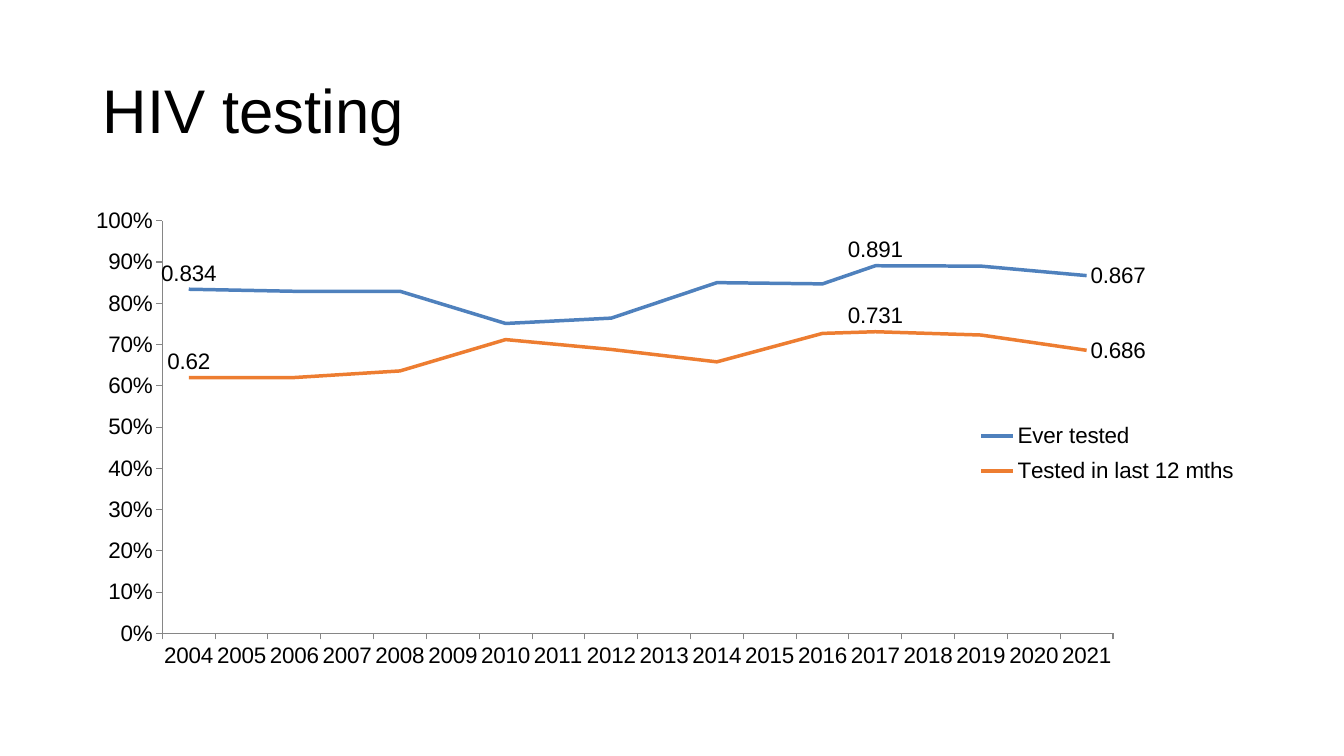
from lxml import etree
from pptx import Presentation
from pptx.chart.data import CategoryChartData
from pptx.dml.color import RGBColor
from pptx.enum.chart import XL_CHART_TYPE as ChartType
from pptx.enum.chart import XL_LABEL_POSITION as LabelPosition
from pptx.enum.chart import XL_LEGEND_POSITION as LegendPosition
from pptx.enum.chart import XL_TICK_MARK as TickMark
from pptx.enum.text import MSO_ANCHOR, PP_ALIGN
from pptx.oxml.ns import qn
from pptx.util import Inches, Pt

FONT = "Arial"
YEARS = range(2004, 2022)
# Survey years only; the line spans the years between
EVER_TESTED = {2004: 0.834, 2006: 0.829, 2008: 0.829, 2010: 0.751, 2012: 0.764,
               2014: 0.85, 2016: 0.847, 2017: 0.891, 2019: 0.89, 2021: 0.867}
LAST_YEAR = {2004: 0.62, 2006: 0.62, 2008: 0.636, 2010: 0.712, 2012: 0.688,
             2014: 0.658, 2016: 0.727, 2017: 0.731, 2019: 0.723, 2021: 0.686}
SERIES = [("Ever tested", EVER_TESTED, "4F81BD"),
          ("Tested in last 12 mths", LAST_YEAR, "ED7D31")]
LABELS = {2004: LabelPosition.ABOVE, 2017: LabelPosition.ABOVE,
          2021: LabelPosition.RIGHT}


def color(hex_code):
    return RGBColor.from_string(hex_code)


def set_font(font, size):
    font.name = FONT
    font.size = Pt(size)
    font.color.rgb = color("000000")


def add_title(page, text):
    title = page.shapes.title
    title.left, title.top = Inches(0.92), Inches(0.4)
    title.width, title.height = Inches(11.5), Inches(1.45)
    frame = title.text_frame
    frame.text = text
    frame.word_wrap = True
    frame.vertical_anchor = MSO_ANCHOR.MIDDLE
    para = frame.paragraphs[0]
    para.alignment = PP_ALIGN.LEFT
    para.line_spacing = 0.9
    set_font(para.font, 44)


def set_layout(element, index, bounds, inner=False):
    """Place a chart part by fractions of the chart: x, y, w, h."""
    for old in element.findall(qn("c:layout")):
        element.remove(old)
    layout = etree.Element(qn("c:layout"))
    manual = etree.SubElement(layout, qn("c:manualLayout"))
    settings = [("layoutTarget", "inner")] if inner else []
    settings += [("xMode", "edge"), ("yMode", "edge")]
    settings += zip("xywh", map(str, bounds))
    for tag, value in settings:
        etree.SubElement(manual, qn(f"c:{tag}")).set("val", value)
    element.insert(index, layout)


def style_axis(axis):
    axis.has_major_gridlines = False
    axis.major_tick_mark = TickMark.OUTSIDE
    axis.minor_tick_mark = TickMark.NONE
    axis.format.line.color.rgb = color("868686")
    axis.format.line.width = Pt(0.75)


def style_series(series, hex_code):
    series.smooth = False
    series.format.line.color.rgb = color(hex_code)
    series.format.line.width = Pt(2.5)
    series.data_labels.show_value = False
    for year, position in LABELS.items():
        label = series.points[YEARS.index(year)].data_label
        label.position = position
        set_font(label.font, 16)


def add_testing_chart(page):
    data = CategoryChartData()
    data.categories = [str(year) for year in YEARS]
    for name, rates, _ in SERIES:
        data.add_series(name, [rates.get(year) for year in YEARS])
    chart = page.shapes.add_chart(
        ChartType.LINE, Inches(0.92), Inches(2), Inches(11.5), Inches(4.76), data
    ).chart
    set_font(chart.font, 16)
    chart.has_title = False

    # Axes
    style_axis(chart.category_axis)
    style_axis(chart.value_axis)
    rates_axis = chart.value_axis
    rates_axis.minimum_scale, rates_axis.maximum_scale = 0, 1
    rates_axis.major_unit = 0.1
    rates_axis.tick_labels.number_format = "0%"
    rates_axis.tick_labels.number_format_is_linked = False

    # Lines
    chart.plots[0].vary_by_categories = False
    for series, (_, _, hex_code) in zip(chart.plots[0].series, SERIES):
        style_series(series, hex_code)

    # Legend
    chart.has_legend = True
    chart.legend.position = LegendPosition.RIGHT
    chart.legend.include_in_layout = False

    # Placement and gaps
    root = chart.element if hasattr(chart, "element") else chart._chartSpace
    set_layout(next(root.iter(qn("c:plotArea"))), 0, (0.06, 0.04, 0.82, 0.86), True)
    set_layout(next(root.iter(qn("c:legend"))), 1, (0.76, 0.44, 0.23, 0.17))
    next(root.iter(qn("c:dispBlanksAs"))).set("val", "span")


def main():
    deck = Presentation()
    deck.slide_width, deck.slide_height = Inches(13.33), Inches(7.5)
    page = deck.slides.add_slide(deck.slide_layouts[5])
    add_title(page, "HIV testing")
    add_testing_chart(page)
    deck.save("out.pptx")


if __name__ == "__main__":
    main()
